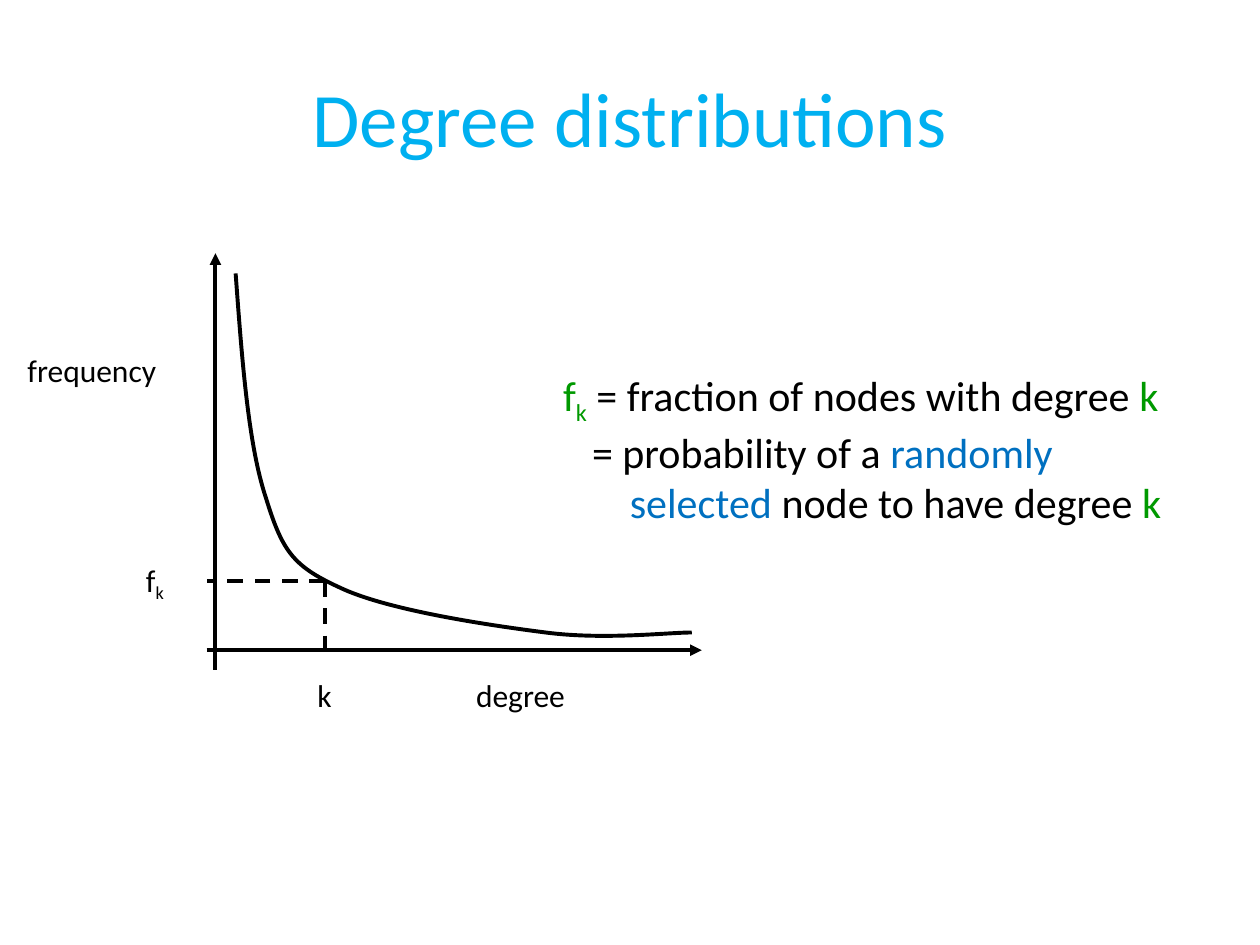
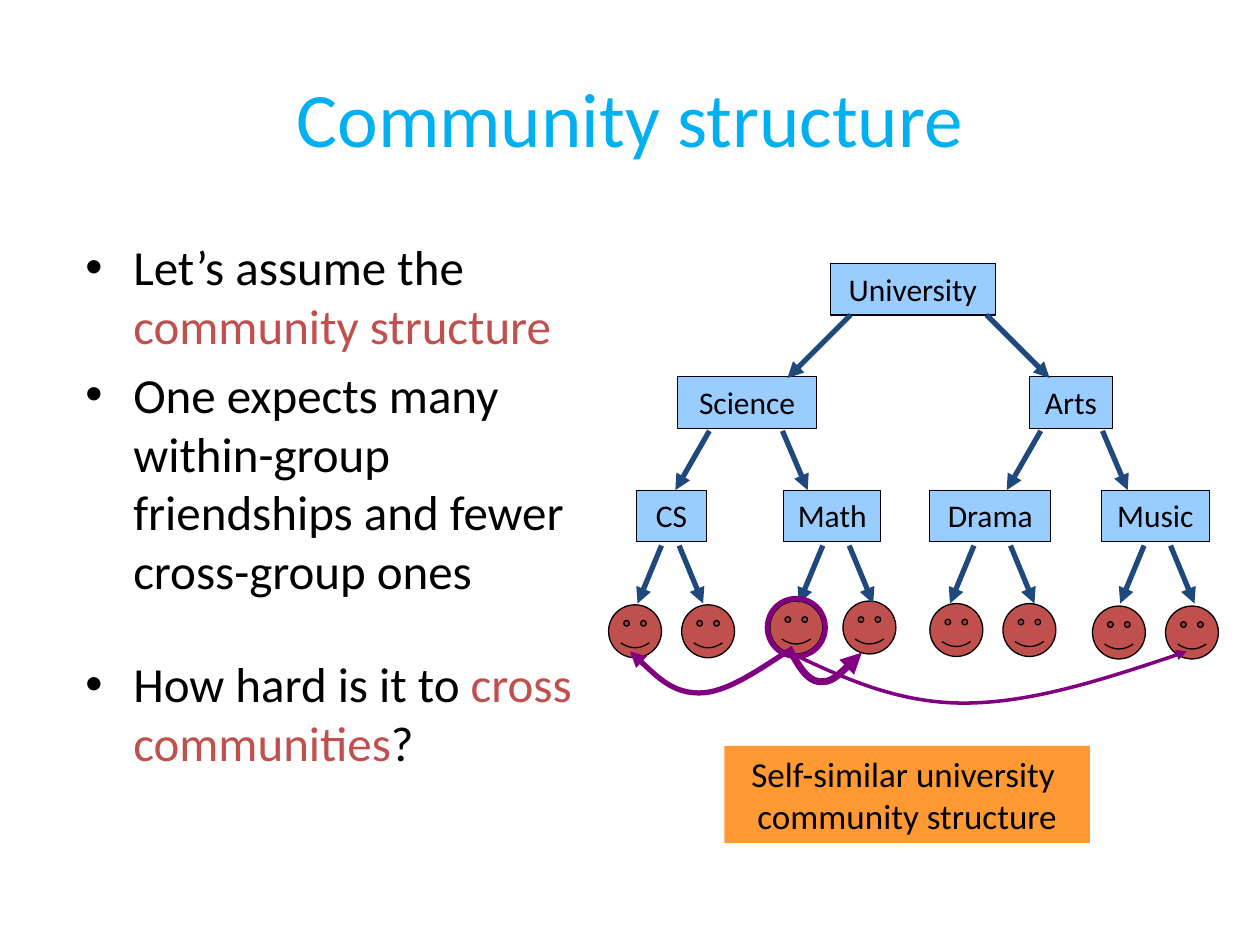
"""Builds two slides on degree distributions and community structure."""
from itertools import zip_longest

from lxml.etree import SubElement
from pptx import Presentation
from pptx.dml.color import RGBColor
from pptx.enum.dml import MSO_LINE
from pptx.enum.shapes import MSO_CONNECTOR, MSO_SHAPE
from pptx.enum.text import MSO_ANCHOR, PP_ALIGN
from pptx.oxml.ns import qn
from pptx.util import Inches, Pt

FONT = "Calibri"
BLACK = RGBColor(0x00, 0x00, 0x00)
SKY = RGBColor(0x00, 0xB0, 0xF0)
GREEN = RGBColor(0x00, 0x99, 0x00)
BLUE = RGBColor(0x00, 0x70, 0xC0)
RED = RGBColor(0xC0, 0x50, 0x4D)
PALE = RGBColor(0x99, 0xCC, 0xFF)
NAVY = RGBColor(0x1F, 0x49, 0x7D)
PURPLE = RGBColor(0x80, 0x00, 0x80)
ORANGE = RGBColor(0xFF, 0x99, 0x33)


def write(frame, lines, size=18, color=BLACK, align=PP_ALIGN.LEFT, wrap=False,
          anchor=MSO_ANCHOR.TOP, gaps=(), pads=(), bullet=False):
    frame.word_wrap = wrap
    frame.vertical_anchor = anchor
    for i, (line, gap, pad) in enumerate(zip_longest(lines, gaps, pads, fillvalue=0)):
        para = frame.paragraphs[0] if i == 0 else frame.add_paragraph()
        props = para._p.get_or_add_pPr()
        if bullet:
            props.set("indent", str(-Inches(pad)))
            SubElement(props, qn("a:buFont"), typeface="Arial")
            SubElement(props, qn("a:buChar"), char="•")
        if pad:
            props.set("marL", str(Inches(pad)))
        para.alignment = align
        para.space_before = Pt(gap)
        for text, tint, *base in [(line, color)] if isinstance(line, str) else line:
            run = para.add_run()
            run.text = text
            run.font.name = FONT
            run.font.size = Pt(size)
            run.font.color.rgb = tint
            if base:
                run._r.get_or_add_rPr().set("baseline", str(base[0] * 1000))


class Deck:
    """Holds the style and the current slide."""

    def __init__(self):
        self.deck = Presentation()
        self.deck.slide_width, self.deck.slide_height = Inches(10), Inches(7.5)
        self.slide = None

    def start(self, title):
        self.slide = self.deck.slides.add_slide(self.deck.slide_layouts[5])
        head = self.slide.shapes.title
        head.left, head.top = Inches(0.5), Inches(0.3)
        head.width, head.height = Inches(9), Inches(1.25)
        write(head.text_frame, [title], size=44, color=SKY, align=PP_ALIGN.CENTER,
              wrap=True, anchor=MSO_ANCHOR.MIDDLE)

    def label(self, lines, *area, **style):
        box = self.slide.shapes.add_textbox(*map(Inches, area))
        write(box.text_frame, lines, **style)

    def shape(self, kind, *area, fill=None, line=None, width=0.75):
        item = self.slide.shapes.add_shape(kind, *map(Inches, area))
        item.shadow.inherit = False
        if fill is None:
            item.fill.background()
        else:
            item.fill.solid()
            item.fill.fore_color.rgb = fill
        if line is None:
            item.line.fill.background()
        else:
            self.stroke(item, line, width)
        return item

    def box(self, lines, *area, size=18, fill=PALE, line=BLACK):
        item = self.shape(MSO_SHAPE.RECTANGLE, *area, fill=fill, line=line)
        write(item.text_frame, lines, size=size, align=PP_ALIGN.CENTER)

    def stroke(self, item, color, width, head=False, tail=False):
        item.line.color.rgb = color
        item.line.width = Pt(width)
        edge = item._element.spPr.find(qn("a:ln"))
        for tag, shown in (("a:headEnd", head), ("a:tailEnd", tail)):
            if shown:
                SubElement(edge, qn(tag), type="triangle")

    def line(self, *ends, color=BLACK, width=2.25, dash=False, **tips):
        item = self.slide.shapes.add_connector(MSO_CONNECTOR.STRAIGHT, *map(Inches, ends))
        if dash:
            item.line.dash_style = MSO_LINE.DASH
        self.stroke(item, color, width, **tips)
        SubElement(item._element.spPr, qn("a:effectLst"))

    def curve(self, points, color=BLACK, width=2.25, **tips):
        spots = [(Inches(x), Inches(y)) for x, y in points]
        pen = self.slide.shapes.build_freeform(*spots[0])
        pen.add_line_segments(spots[1:], close=False)
        item = pen.convert_to_shape()
        track = item._element.spPr.find(".//" + qn("a:path"))
        steps = track.findall(qn("a:lnTo"))
        for i in range(0, len(steps), 3):
            bend = SubElement(track, qn("a:cubicBezTo"))
            for step in steps[i:i + 3]:
                bend.append(step[0])
                track.remove(step)
        item.shadow.inherit = False
        item.fill.background()
        self.stroke(item, color, width, **tips)

    def fork(self, left, right, top, foot, out, away):
        for x, end in ((left, left - out), (right, right + away)):
            self.line(x, top, end, foot, color=NAVY, width=3, tail=True)


def degrees(deck):
    deck.start("Degree distributions")
    deck.line(1.71, 2.01, 1.71, 5.32, head=True)
    deck.line(1.64, 5.16, 5.57, 5.16, tail=True)
    deck.label(["degree"], 3.68, 5.32, 0.98, 0.4)
    deck.label(["frequency"], 0.12, 2.74, 1.3, 0.4)
    deck.curve([(1.87, 2.17), (1.92, 2.85), (1.97, 3.53), (2.11, 3.95),
                (2.24, 4.37), (2.32, 4.49), (2.69, 4.66),
                (3.06, 4.84), (3.86, 4.96), (4.33, 5.02),
                (4.79, 5.08), (5.3, 5.02), (5.49, 5.02)])
    for x, y in ((2.58, 5.16), (1.64, 4.61)):
        deck.line(2.58, 4.61, x, y, dash=True)
    deck.label(["k"], 2.42, 5.32, 0.33, 0.4)
    deck.label([[("f", BLACK), ("k", BLACK, -25)]], 1.06, 4.4, 0.35, 0.4)
    deck.label([
        [("f", GREEN), ("k", GREEN, -25),
         (" = fraction of nodes with degree ", BLACK), ("k", GREEN)],
        [("= probability of a ", BLACK), ("randomly", BLUE)],
        [("selected", BLUE), (" node to have degree ", BLACK), ("k", GREEN)],
    ], 4.37, 2.88, 4.99, 1.31, size=24, pads=(0, 0.23, 0.53))


def groups(deck):
    deck.start("Community structure")
    deck.label([
        [("Let’s assume the ", BLACK), ("community structure", RED)],
        "One expects many within-group friendships and fewer cross-group ones",
        [("How hard is it to ", BLACK), ("cross communities", RED), ("?", BLACK)],
    ], 0.58, 1.83, 4.17, 5.25, size=28, wrap=True, bullet=True,
        gaps=(0, 5.6, 31), pads=(0.38, 0.38, 0.38))
    deck.box(["Self-similar university ", "community structure"],
             5.75, 5.92, 2.9, 0.77, size=20, fill=ORANGE, line=None)

    units = (("CS", 5.05, 0.56, 4.83, 4.8, 5.25, 5.39),
             ("Math", 6.22, 0.77, 6.11, 4.77, 6.53, 6.74),
             ("Drama", 7.38, 0.96, 7.38, 4.79, 7.73, 8.02),
             ("Music", 8.74, 0.86, 8.67, 4.81, 9.08, 9.29))
    for name, x, wide, face, top, left, right in units:
        for shift in (0, 0.58):
            deck.shape(MSO_SHAPE.SMILEY_FACE, face + shift, top, 0.42, 0.42,
                       fill=RED, line=BLACK)
        deck.box([name], x, 3.89, wide, 0.41)
        deck.fork(left, right, 4.33, 4.79, 0.19, 0.19)
    for name, x, wide, left, right in (("Science", 5.38, 1.1, 5.63, 6.21),
                                       ("Arts", 8.17, 0.66, 8.26, 8.75)):
        deck.box([name], x, 2.99, wide, 0.41)
        deck.fork(left, right, 3.42, 3.89, 0.27, 0.2)
    deck.box(["University"], 6.59, 2.09, 1.31, 0.41)
    deck.fork(6.75, 7.83, 2.5, 3, 0.5, 0.5)

    deck.shape(MSO_SHAPE.OVAL, 6.09, 4.75, 0.46, 0.46, line=PURPLE, width=3)
    deck.curve([(9.42, 5.17), (8.8, 5.38), (8.18, 5.58), (7.65, 5.58),
                (7.12, 5.58), (6.69, 5.38), (6.25, 5.17)],
               color=PURPLE, width=2, head=True)
    deck.curve([(6.84, 5.18), (6.72, 5.3), (6.6, 5.42), (6.5, 5.41),
                (6.4, 5.4), (6.33, 5.27), (6.26, 5.14)],
               color=PURPLE, width=4, head=True)
    deck.curve([(6.25, 5.17), (6, 5.33), (5.76, 5.5), (5.55, 5.5),
                (5.34, 5.5), (5.17, 5.33), (5, 5.17)],
               color=PURPLE, width=3, tail=True)


def main():
    deck = Deck()
    degrees(deck)
    groups(deck)
    deck.deck.save("out.pptx")


if __name__ == "__main__":
    main()
